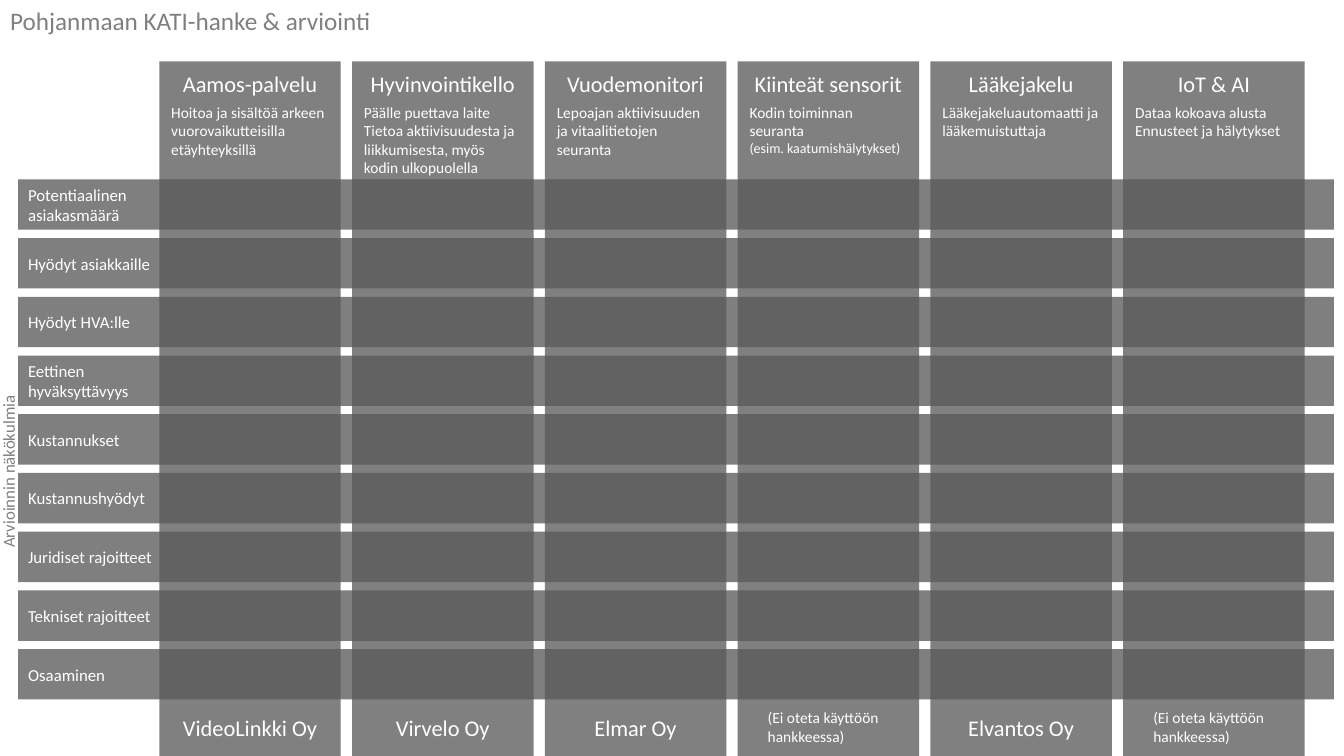
from lxml import etree
from pptx import Presentation
from pptx.dml.color import RGBColor
from pptx.enum.shapes import MSO_SHAPE
from pptx.enum.text import MSO_ANCHOR, MSO_AUTO_SIZE, PP_ALIGN
from pptx.oxml.ns import qn
from pptx.util import Inches, Pt

RECTANGLE = MSO_SHAPE.RECTANGLE
TOP, MIDDLE = MSO_ANCHOR.TOP, MSO_ANCHOR.MIDDLE
GROW, FIXED = MSO_AUTO_SIZE.SHAPE_TO_FIT_TEXT, MSO_AUTO_SIZE.NONE
LEFT, CENTER = PP_ALIGN.LEFT, PP_ALIGN.CENTER

COLORS = {"grey": "808080", "band": "595959", "white": "FFFFFF"}

COLUMN_LEFT, COLUMN_TOP, COLUMN_STEP = 1.58, 0.61, (11.14 - 1.58) / 5
COLUMN_WIDTH, COLUMN_HEIGHT = 1.8, 6.89
ROW_LEFT, ROW_TOP, ROW_STEP = 0.18, 1.78, (6.44 - 1.78) / 8
ROW_WIDTH, ROW_HEIGHT = 13.05, 0.5

UNUSED = ["(Ei oteta käyttöön", "hankkeessa)"]
SERVICES = [
    ("Aamos-palvelu", [("Hoitoa ja sisältöä arkeen vuorovaikutteisilla etäyhteyksillä", 11)], "VideoLinkki Oy"),
    ("Hyvinvointikello", [("Päälle puettava laite", 11),
                          ("Tietoa aktiivisuudesta ja liikkumisesta, myös kodin ulkopuolella", 11)], "Virvelo Oy"),
    ("Vuodemonitori", [("Lepoajan aktiivisuuden ja vitaalitietojen seuranta", 11)], "Elmar Oy"),
    ("Kiinteät sensorit", [("Kodin toiminnan seuranta", 11), ("(esim. kaatumishälytykset)", 10)], None),
    ("Lääkejakelu", [("Lääkejakeluautomaatti ja lääkemuistuttaja", 11)], "Elvantos Oy"),
    ("IoT & AI", [("Dataa kokoava alusta", 11), ("Ennusteet ja hälytykset", 11)], None),
]
CRITERIA = [
    ["Potentiaalinen", "asiakasmäärä"],
    ["Hyödyt asiakkaille"],
    ["Hyödyt HVA:lle"],
    ["Eettinen", "hyväksyttävyys"],
    ["Kustannukset"],
    ["Kustannushyödyt"],
    ["Juridiset rajoitteet"],
    ["Tekniset rajoitteet"],
    ["Osaaminen"],
]


class EvaluationSlide:
    font = "Calibri"

    def __init__(self, presentation):
        self.slide = presentation.slides.add_slide(presentation.slide_layouts[5])

    def fill_frame(self, frame, lines, color="white", align=LEFT, **frame_format):
        for name, value in frame_format.items():
            setattr(frame, name, value)
        for index, (line, size) in enumerate(lines):
            paragraph = frame.add_paragraph() if index else frame.paragraphs[0]
            paragraph.alignment = align
            run = paragraph.add_run()
            run.text = line
            for name, value in {"name": self.font, "size": Pt(size), "bold": False}.items():
                setattr(run.font, name, value)
            run.font.color.rgb = RGBColor.from_string(COLORS[color])

    def title(self, box, line):
        heading = self.slide.shapes.title
        for name, value in zip(("left", "top", "width", "height"), box):
            setattr(heading, name, Inches(value))
        self.fill_frame(heading.text_frame, [(line, 18)], "grey",
                        vertical_anchor=MIDDLE, auto_size=FIXED, word_wrap=True)

    def bar(self, box, color, lines=(), alpha=None):
        bar = self.slide.shapes.add_shape(RECTANGLE, *map(Inches, box))
        bar.shadow.inherit = False
        bar.line.fill.background()
        bar.fill.solid()
        bar.fill.fore_color.rgb = RGBColor.from_string(COLORS[color])
        if alpha:
            tint = bar.element.spPr.find(qn("a:solidFill"))[0]
            etree.SubElement(tint, qn("a:alpha"), val=str(alpha * 1000))
        if lines:
            self.fill_frame(bar.text_frame, lines, vertical_anchor=MIDDLE)

    def text(self, box, lines, color="white", align=LEFT, rotation=0,
             anchor=TOP, fit=GROW, wrap=True):
        label = self.slide.shapes.add_textbox(*map(Inches, box))
        label.rotation = rotation
        self.fill_frame(label.text_frame, lines, color, align,
                        vertical_anchor=anchor, auto_size=fit, word_wrap=wrap)


def main():
    presentation = Presentation()
    presentation.slide_width = Inches(13.33)
    presentation.slide_height = Inches(7.5)
    page = EvaluationSlide(presentation)
    page.title((0, -0.01, 13.33, 0.42), "Pohjanmaan KATI-hanke & arviointi")

    lefts = [COLUMN_LEFT + index * COLUMN_STEP for index in range(len(SERVICES))]
    for left, (service, description, _) in zip(lefts, SERVICES):
        page.bar((left, COLUMN_TOP, COLUMN_WIDTH, COLUMN_HEIGHT), "grey")
        page.text((left, 0.65, COLUMN_WIDTH, 0.37), [(service, 16)], align=CENTER)
        page.text((left + 0.02, 0.97, 1.76, 0.47), description)

    for index, criterion in enumerate(CRITERIA):
        page.bar((ROW_LEFT, ROW_TOP + index * ROW_STEP, ROW_WIDTH, ROW_HEIGHT), "band",
                 [(line, 12) for line in criterion], alpha=77)
    page.text((-3.87, 4.47, 7.9, 0.42), [("Arvioinnin näkökulmia", 12)], "grey", CENTER,
              rotation=270, anchor=MIDDLE, fit=FIXED)

    for left, (_, _, supplier) in zip(lefts, SERVICES):
        if supplier:
            page.text((left, 7.04, COLUMN_WIDTH, 0.37), [(supplier, 16)], align=CENTER)
        else:
            page.text((left + 0.2, 6.98, 1.36, 0.47), [(line, 11) for line in UNUSED], wrap=False)

    presentation.save("out.pptx")


if __name__ == "__main__":
    main()
